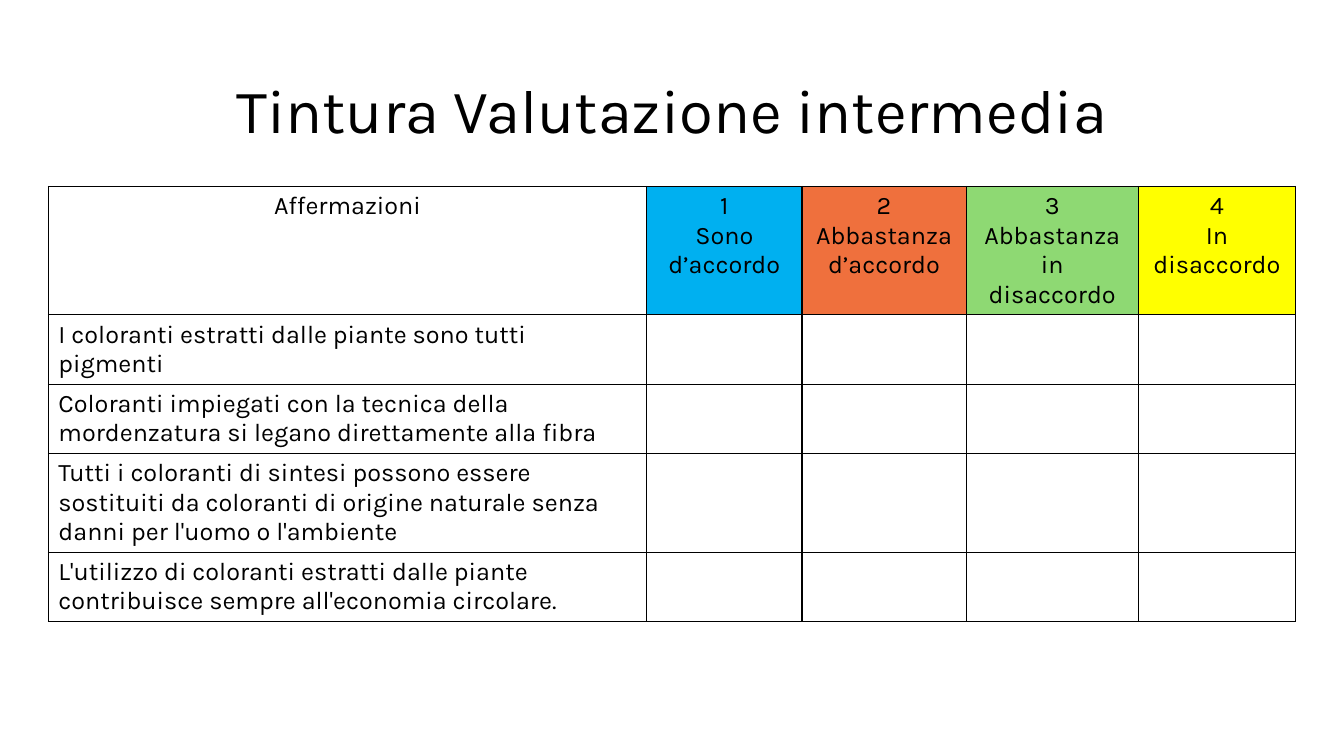
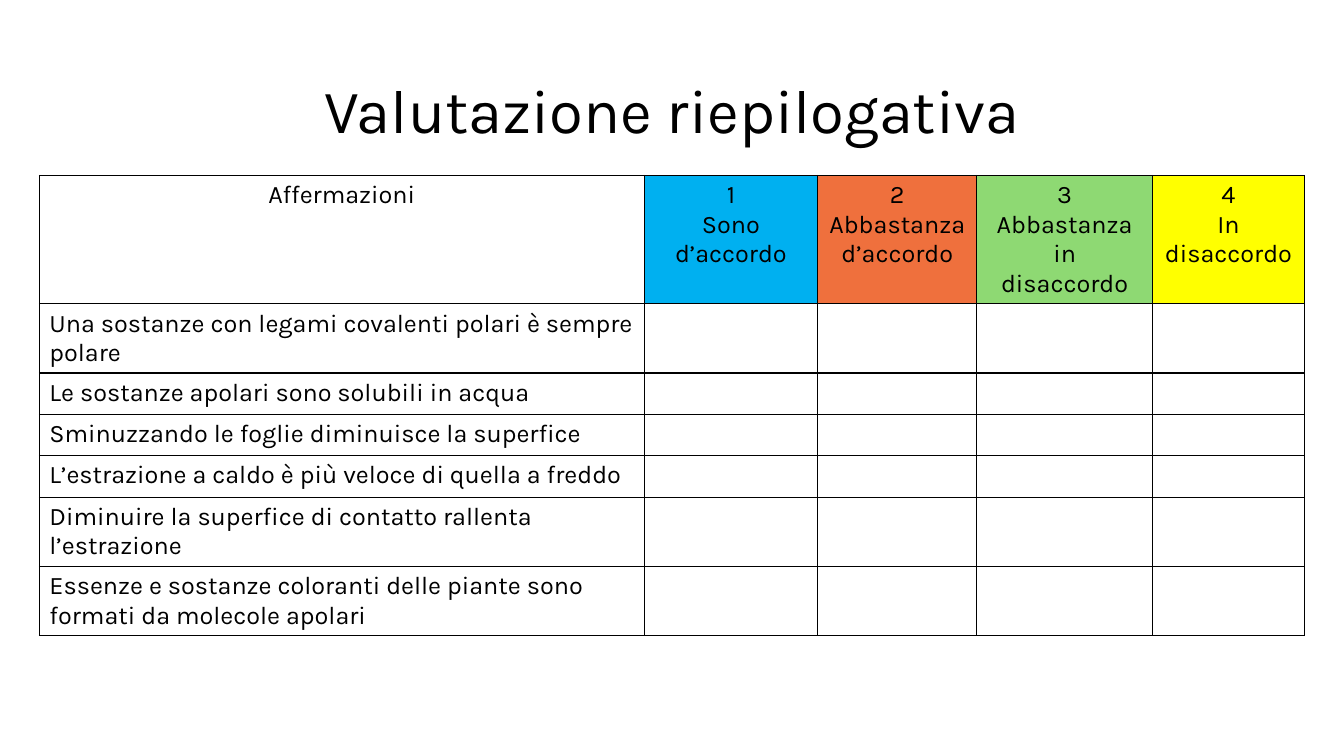
from dataclasses import dataclass

import pptx
import pptx.dml.color
import pptx.enum.text
import pptx.oxml
import pptx.oxml.ns
import pptx.util

ALIGN = pptx.enum.text.PP_ALIGN
SLIDE_WIDTH = pptx.util.Inches(13.33)
SLIDE_HEIGHT = pptx.util.Inches(7.5)
TITLE_ONLY = 5


@dataclass(frozen=True)
class Theme:
    font: str = "Karla"
    ink: str = "000000"
    title_size: int = 44
    body_size: int = 18
    border: float = 1
    row_height: float = 5.47  # least height, in percent of the slide


THEME = Theme()

# Rating scale: header paragraphs and colour of each answer column
SCALE = [
    (["1", "Sono d’accordo"], "00B0F0"),
    (["2", "Abbastanza d’accordo"], "EF703D"),
    (["3", "Abbastanza in disaccordo"], "8ED973"),
    (["4", "In disaccordo"], "FFFF00"),
]

# Margin and top are percents of the slide; columns are relative widths
SURVEYS = [
    {
        "title": "Tintura Valutazione intermedia",
        "margin": 3.6,
        "top": 24.67,
        "columns": [5.94, 1.54, 1.63, 1.71, 1.56],
        "statements": [
            "I coloranti estratti dalle piante sono tutti pigmenti",
            "Coloranti impiegati con la tecnica della mordenzatura si legano "
            "direttamente alla fibra",
            "Tutti i coloranti di sintesi possono essere sostituiti da coloranti "
            "di origine naturale senza danni per l'uomo o l'ambiente",
            "L'utilizzo di coloranti estratti dalle piante contribuisce sempre "
            "all'economia circolare.",
        ],
    },
    {
        "title": "Valutazione riepilogativa",
        "margin": 2.93,
        "top": 23.2,
        "columns": [6, 1.72, 1.58, 1.74, 1.51],
        "statements": [
            "Una sostanze con legami covalenti polari è sempre polare",
            "Le sostanze apolari sono solubili in acqua",
            "Sminuzzando le foglie diminuisce la superfice",
            "L’estrazione a caldo è più veloce di quella a freddo",
            "Diminuire la superfice di contatto rallenta l’estrazione",
            "Essenze e sostanze coloranti delle piante sono formati da "
            "molecole apolari",
        ],
    },
]


def across(percent):
    return round(SLIDE_WIDTH * percent / 100)


def down(percent):
    return round(SLIDE_HEIGHT * percent / 100)


def apply(target, values):
    for name, value in values.items():
        setattr(target, name, value)


def write(frame, lines, size, **para_format):
    """Write one paragraph per line in the theme's font."""
    for index, line in enumerate(lines):
        para = frame.paragraphs[0] if index == 0 else frame.add_paragraph()
        apply(para, para_format)
        span = para.add_run()
        span.text = line
        apply(span.font, {"name": THEME.font, "size": pptx.util.Pt(size), "bold": False})
        span.font.color.rgb = pptx.dml.color.RGBColor.from_string(THEME.ink)


def add_title(slide, text):
    title = slide.shapes.title
    apply(title, {"left": across(6.9), "top": down(5.33),
                  "width": across(86.25), "height": down(19.33)})
    apply(title.text_frame, {"word_wrap": True,
                             "vertical_anchor": pptx.enum.text.MSO_ANCHOR.MIDDLE})
    write(title.text_frame, [text], THEME.title_size,
          alignment=ALIGN.CENTER, line_spacing=0.9)


def style_cell(cell, color=None):
    """Fill the cell, or leave it clear, and draw its four borders."""
    if color:
        cell.fill.solid()
        cell.fill.fore_color.rgb = pptx.dml.color.RGBColor.from_string(color)
    else:
        cell.fill.background()
    properties = cell._tc.get_or_add_tcPr()
    for index, side in enumerate(("lnL", "lnR", "lnT", "lnB")):
        properties.insert(index, pptx.oxml.parse_xml(
            f'<a:{side} {pptx.oxml.ns.nsdecls("a")} w="{pptx.util.Pt(THEME.border)}">'
            f'<a:solidFill><a:srgbClr val="{THEME.ink}"/></a:solidFill></a:{side}>'))


def add_survey_table(slide, survey):
    statements, weights = survey["statements"], survey["columns"]
    row_count = len(statements) + 1
    width = across(100 - 2 * survey["margin"])
    table = slide.shapes.add_table(
        row_count, len(weights), across(survey["margin"]), down(survey["top"]),
        width, down(THEME.row_height) * row_count).table
    apply(table, {"first_row": False, "horz_banding": False})
    for column, weight in zip(table.columns, weights):
        column.width = round(width * weight / sum(weights))

    # Header row
    header = [(["Affermazioni"], None)] + SCALE
    for index, (lines, color) in enumerate(header):
        cell = table.cell(0, index)
        write(cell.text_frame, lines, THEME.body_size, alignment=ALIGN.CENTER)
        style_cell(cell, color)

    # Statements, with empty answer cells
    for row, statement in enumerate(statements, start=1):
        write(table.cell(row, 0).text_frame, [statement], THEME.body_size)
        for index in range(len(weights)):
            style_cell(table.cell(row, index))


def main():
    deck = pptx.Presentation()
    apply(deck, {"slide_width": SLIDE_WIDTH, "slide_height": SLIDE_HEIGHT})
    for survey in SURVEYS:
        slide = deck.slides.add_slide(deck.slide_layouts[TITLE_ONLY])
        add_title(slide, survey["title"])
        add_survey_table(slide, survey)
    deck.save("out.pptx")


if __name__ == "__main__":
    main()
